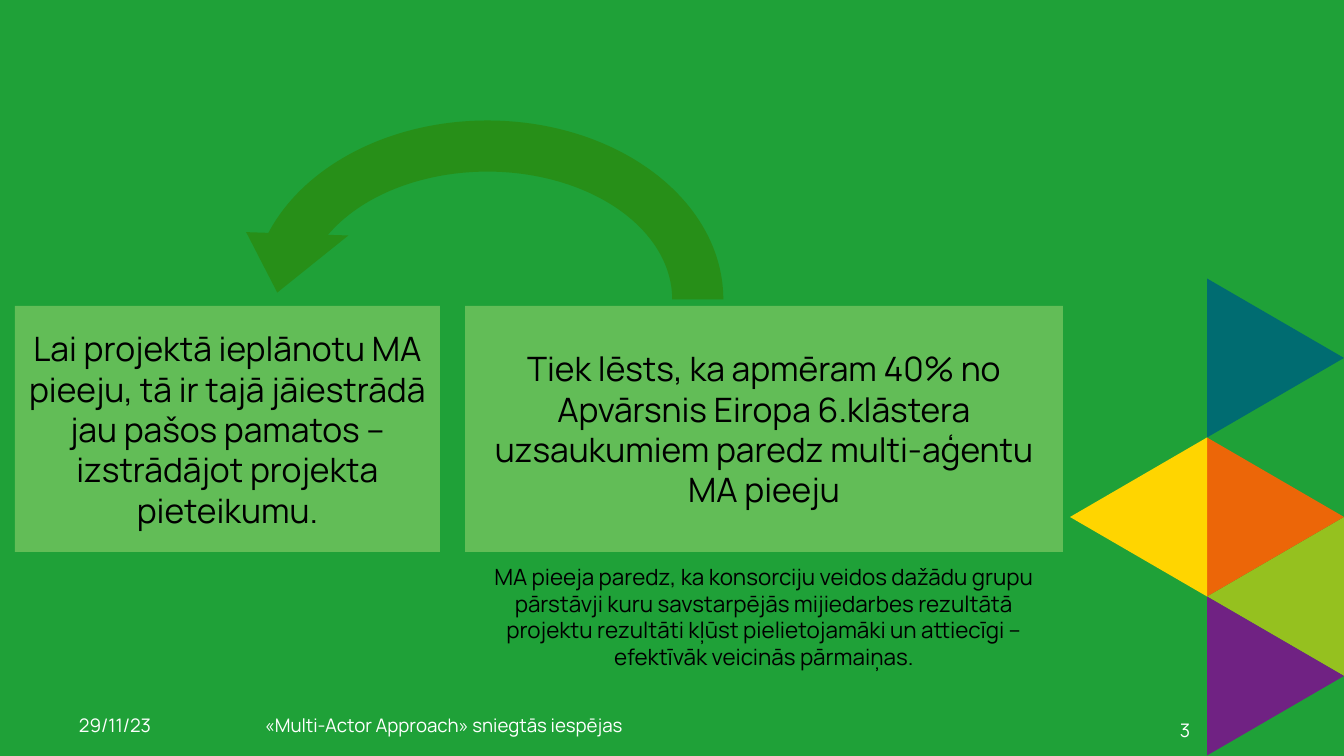
from pptx import Presentation
from pptx.dml.color import RGBColor
from pptx.enum.shapes import MSO_SHAPE
from pptx.enum.text import MSO_ANCHOR, PP_ALIGN
from pptx.util import Pt

PX = 914400 / 134.4  # EMU per px
THEME = {
    "font": "Manrope",
    "ground": "1FA138", "panel": "62BD57", "arrow": "278F18",
    "ink": "000000", "footer": "FFFFFF",
    "lime": "95C11F", "purple": "702283", "teal": "006C71",
    "orange": "EC6608", "yellow": "FFD500",
    "statement_size": 18, "note_size": 12, "footer_size": 10,
}

deck = Presentation()
deck.slide_width, deck.slide_height = round(1344 * PX), round(756 * PX)
slide = deck.slides.add_slide(deck.slide_layouts[6])
slide.background.fill.solid()
slide.background.fill.fore_color.rgb = RGBColor.from_string(THEME["ground"])


def add_filled(preset, left, top, width, height, color):
    box = [round(v * PX) for v in (left, top, width, height)]
    shape = slide.shapes.add_shape(preset, *box)
    shape.shadow.inherit = False
    shape.fill.solid()
    shape.fill.fore_color.rgb = RGBColor.from_string(THEME[color])
    shape.line.fill.background()
    return shape


def write(holder, wording, size, color, align, anchor, inset=True):
    frame = holder.text_frame
    frame.word_wrap = True
    frame.vertical_anchor = anchor
    if not inset:
        frame.margin_left = frame.margin_right = 0
        frame.margin_top = frame.margin_bottom = 0
    paragraph = frame.paragraphs[0]
    paragraph.alignment = align
    run = paragraph.add_run()
    run.text = wording
    run.font.name = THEME["font"]
    run.font.size = Pt(THEME[size])
    run.font.color.rgb = RGBColor.from_string(THEME[color])


# Triangle pattern: two columns, each row half a triangle side apart
SIDE, DEPTH = 159, 137
LEFT_COLUMN, RIGHT_COLUMN = 1070, 1207
FIRST_ROW = 358
for color, column, half_steps, rotation in [
    ("lime", RIGHT_COLUMN, 3, 270),
    ("purple", RIGHT_COLUMN, 4, 90),
    ("teal", RIGHT_COLUMN, 0, 90),
    ("orange", RIGHT_COLUMN, 2, 90),
    ("yellow", LEFT_COLUMN, 2, 270),
]:
    center_x = column + DEPTH / 2
    center_y = FIRST_ROW + half_steps * SIDE / 2
    triangle = add_filled(MSO_SHAPE.ISOSCELES_TRIANGLE, center_x - SIDE / 2,
                          center_y - DEPTH / 2, SIDE, DEPTH, color)
    triangle.rotation = rotation

# Footer
for wording, left, width, align, anchor in [
    ("3", 1032, 158, PP_ALIGN.RIGHT, MSO_ANCHOR.BOTTOM),
    ("«Multi-Actor Approach» sniegtās iespējas", 265, 634, PP_ALIGN.LEFT, MSO_ANCHOR.TOP),
    ("29/11/23", 79, 159, PP_ALIGN.LEFT, MSO_ANCHOR.TOP),
]:
    box = [round(v * PX) for v in (left, 714, width, 27)]
    write(slide.shapes.add_textbox(*box), wording, "footer_size", "footer",
          align, anchor, inset=False)

# Statements, with the arrow leading from the right one to the left one
for wording, left, width in [
    ("Tiek lēsts, ka apmēram 40% no Apvārsnis Eiropa 6.klāstera uzsaukumiem "
     "paredz multi-aģentu MA pieeju", 465, 598),
    ("Lai projektā ieplānotu MA pieeju, tā ir tajā jāiestrādā jau pašos "
     "pamatos – izstrādājot projekta pieteikumu.", 15, 425),
]:
    panel = add_filled(MSO_SHAPE.RECTANGLE, left, 306, width, 246, "panel")
    write(panel, wording, "statement_size", "ink", PP_ALIGN.CENTER, MSO_ANCHOR.MIDDLE)

note = slide.shapes.add_textbox(*[round(v * PX) for v in (465, 527, 598, 179)])
write(note, "MA pieeja paredz, ka konsorciju veidos dažādu grupu pārstāvji kuru "
      "savstarpējās mijiedarbes rezultātā projektu rezultāti kļūst pielietojamāki "
      "un attiecīgi – efektīvāk veicinās pārmaiņas.",
      "note_size", "ink", PP_ALIGN.CENTER, MSO_ANCHOR.MIDDLE)

arrow = add_filled(MSO_SHAPE.CIRCULAR_ARROW, 226, 95, 523, 409, "arrow")
for index, value in enumerate([0.125, 10.3, 204.58, 108, 0.125]):
    arrow.adjustments[index] = value
arrow_frame = arrow.element.spPr.find(
    "{http://schemas.openxmlformats.org/drawingml/2006/main}xfrm")
arrow_frame.set("flipH", "1")

deck.save("out.pptx")
